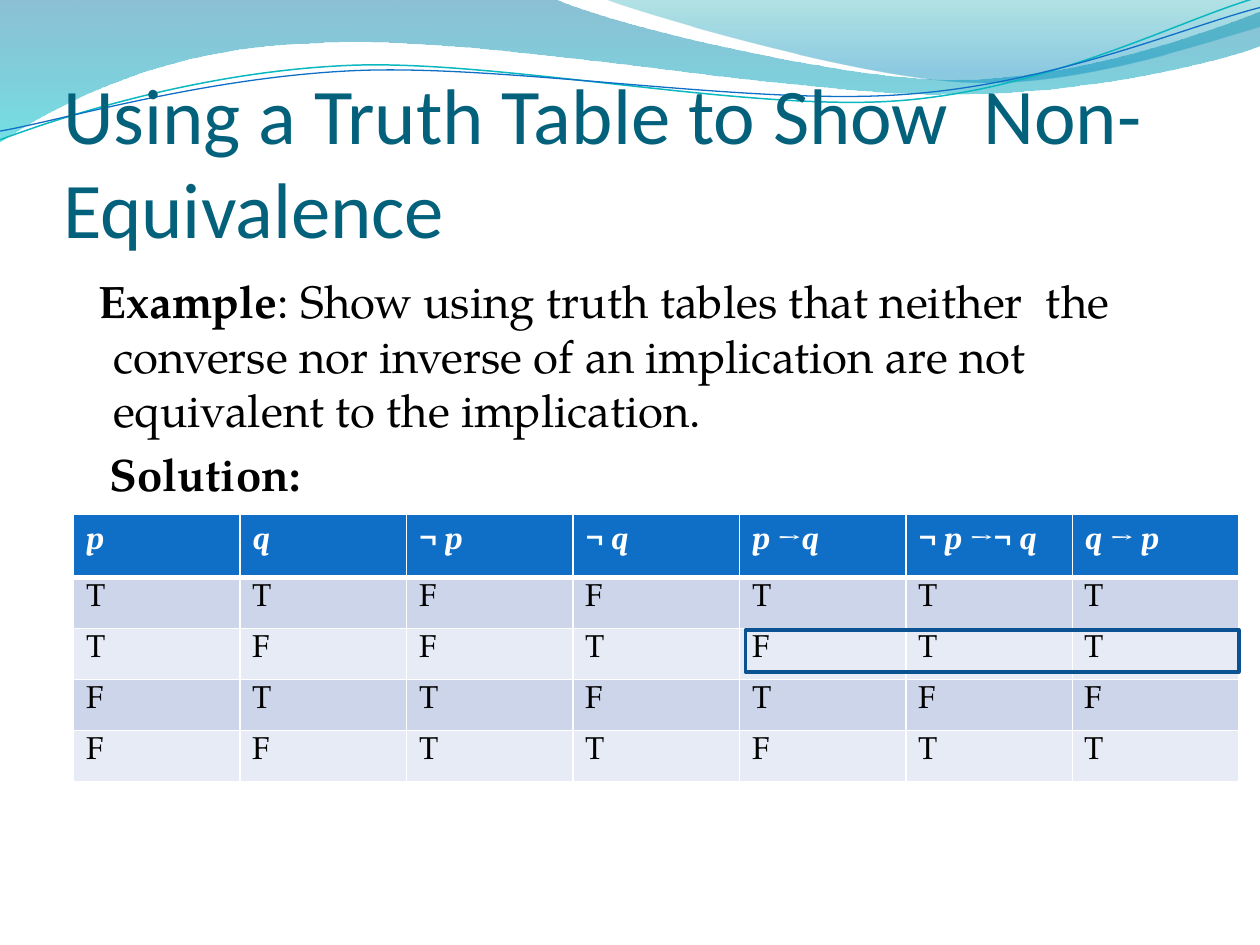
from dataclasses import dataclass
from itertools import groupby
from typing import Optional

from lxml.etree import SubElement
from pptx import Presentation
from pptx.dml.color import RGBColor
from pptx.enum.shapes import MSO_SHAPE
from pptx.enum.text import MSO_ANCHOR, MSO_AUTO_SIZE, PP_ALIGN
from pptx.oxml.ns import qn
from pptx.util import Pt

BLACK = RGBColor(0x00, 0x00, 0x00)
WHITE = RGBColor(0xFF, 0xFF, 0xFF)
TITLE_TEAL = RGBColor(0x04, 0x61, 0x7B)
BLUE = RGBColor(0x0F, 0x6F, 0xC6)
DARK_BLUE = RGBColor(0x0B, 0x52, 0x92)
AQUA = RGBColor(0x0A, 0xB8, 0xBF)
BANDS = (RGBColor(0xCC, 0xD5, 0xEA), RGBColor(0xE7, 0xEB, 0xF5))
BODY_FONT = "TeX Gyre Pagella"


@dataclass
class Stop:
    position: float
    color: RGBColor
    opacity: int  # percent


@dataclass
class Wave:
    """Path in points: 2 numbers are a line end, 6 a cubic Bézier segment."""
    start: tuple
    segments: list
    stops: tuple = ()
    line: Optional[RGBColor] = None
    width: float = 0


WAVES = [
    Wave((0, 0), [
        (316.8, -0.7), (342.7, 12.2, 478.1, 45.4, 545.8, 45.4),
        (614.2, 45.4, 689.8, 18.7, 720, 6.5), (720.7, 25.9),
        (707.8, 31.7, 626.4, 54.7, 537.1, 54),
        (447.8, 54, 275, 20.2, 185, 24.5),
        (92.9, 25.9, 33.1, 59.8, -0.7, 81.4), (0, 0)],
        stops=(Stop(0, RGBColor(0x00, 0x74, 0xA1), 45),
               Stop(1, RGBColor(0x00, 0xC6, 0xCF), 55))),
    Wave((344.9, -0.7), [
        (366.5, 7.9, 491, 44.6, 553.7, 46.8),
        (616.3, 49.7, 691.9, 23, 720, 15.1), (720, 0), (344.9, -0.7)],
        stops=(Stop(0, RGBColor(0x00, 0xA1, 0xA9), 30),
               Stop(0.8, RGBColor(0x00, 0x8B, 0xBF), 45))),
    Wave((0, 79.9), [
        (34.6, 67, 113.8, 41, 199.4, 37.4),
        (284.4, 33.8, 427, 64.1, 513.4, 57.6),
        (599.8, 51.1, 675.4, 10.8, 718.6, -1.4)], line=AQUA, width=0.85),
    Wave((0, 74.9), [
        (33.8, 69.1, 118.1, 43.9, 203.8, 40.3),
        (290.2, 36.7, 429.8, 60.5, 516.2, 54),
        (601.9, 48.2, 677.5, 15.1, 720, 4.3)], line=BLUE, width=0.75),
]

HEADERS = ["p", "q", "¬ p", "¬ q", "p →q", "¬ p →¬ q", "q → p"]
ROWS = ["TTFFTTT", "TFFTFTT", "FTTFTFF", "FFTTFTT"]


def bend_segments(s, wave: Wave) -> None:
    """Merge each run of three vertices of a curve into one cubic segment."""
    vertices = iter(list(s._element.iter(qn("a:lnTo"))))
    for seg in wave.segments:
        first = next(vertices)
        if len(seg) == 6:
            first.tag = qn("a:cubicBezTo")
            for vertex in (next(vertices), next(vertices)):
                first.append(vertex[0])
                vertex.getparent().remove(vertex)


def draw_wave(shapes, wave: Wave) -> None:
    # Path units are hundredths of a point
    x, y = (round(v * 100) for v in wave.start)
    vertices = [(round(seg[i] * 100), round(seg[i + 1] * 100))
                for seg in wave.segments for i in range(0, len(seg), 2)]
    fb = shapes.build_freeform(x, y, scale=Pt(1) / 100)
    fb.add_line_segments(vertices, close=bool(wave.stops))
    s = fb.convert_to_shape()
    bend_segments(s, wave)
    s.shadow.inherit = False
    if wave.stops:
        s.line.fill.background()
        s.fill.gradient()
        s.fill.gradient_angle = 270
        for target, stop in zip(s.fill.gradient_stops, wave.stops):
            target.color.rgb = stop.color
            target.position = stop.position
        for clr, stop in zip(s._element.spPr.iter(qn("a:srgbClr")), wave.stops):
            SubElement(clr, qn("a:alpha")).set("val", str(stop.opacity * 1000))
    else:
        s.fill.background()
        s.line.color.rgb = wave.line
        s.line.width = Pt(wave.width)


def add_run(p, text: str, *, size: float, font: str = BODY_FONT,
            color: RGBColor = BLACK, bold: bool = False, italic: bool = False) -> None:
    r = p.add_run()
    r.text = text
    f = r.font
    f.size, f.name, f.bold, f.italic = Pt(size), font, bold, italic
    f.color.rgb = color


def hang(p, indent: float) -> None:
    pPr = p._p.get_or_add_pPr()
    pPr.set("marL", str(Pt(21.6)))
    pPr.set("indent", str(Pt(indent)))
    p.space_before = Pt(5.2)


def draw_title(s) -> None:
    s.left, s.top, s.width, s.height = Pt(36), Pt(55.4), Pt(648), Pt(90)
    tf = s.text_frame
    tf.auto_size = MSO_AUTO_SIZE.NONE
    tf.word_wrap = True
    tf.vertical_anchor = MSO_ANCHOR.BOTTOM
    tf.margin_left = tf.margin_right = tf.margin_bottom = 0
    p = tf.paragraphs[0]
    p.alignment = PP_ALIGN.LEFT
    add_run(p, "Using a Truth Table to Show  Non-Equivalence",
            size=45, font="Calibri", color=TITLE_TEAL)


def draw_body(shapes) -> None:
    tf = shapes.add_textbox(Pt(36), Pt(152.6), Pt(648), Pt(345.6)).text_frame
    tf.word_wrap = True
    p = tf.paragraphs[0]
    hang(p, -8.2)
    add_run(p, "Example", size=26, bold=True)
    add_run(p, ": Show using truth tables that neither  the converse nor inverse "
               "of an implication are not equivalent to the implication.", size=26)
    p = tf.add_paragraph()
    hang(p, -2)
    add_run(p, "Solution:", size=26, bold=True)


def format_cell(cell, fill: RGBColor, top: float, bottom: float) -> None:
    tcPr = cell._tc.get_or_add_tcPr()
    for side, width in (("L", 1), ("R", 1), ("T", top), ("B", bottom)):
        ln = SubElement(tcPr, qn(f"a:ln{side}"), w=str(Pt(width)))
        SubElement(SubElement(ln, qn("a:solidFill")), qn("a:srgbClr"), val=str(WHITE))
    cell.fill.solid()
    cell.fill.fore_color.rgb = fill


def draw_truth_table(shapes) -> None:
    table = shapes.add_table(len(ROWS) + 1, len(HEADERS), Pt(42), Pt(294),
                             Pt(666), Pt(152.6)).table
    for col in table.columns:
        col.width = Pt(666 / len(HEADERS))
    for i, row in enumerate(table.rows):
        row.height = Pt(29.16 if i else 36)
    for c, header in enumerate(HEADERS):
        cell = table.cell(0, c)
        format_cell(cell, BLUE, top=1, bottom=3)
        # Variables are italic, operators upright
        for italic, chars in groupby(header, key=lambda ch: ch in "pq"):
            add_run(cell.text_frame.paragraphs[0], "".join(chars), size=18,
                    font="Cambria", color=WHITE, bold=True, italic=italic)
    for i, values in enumerate(ROWS):
        for c, value in enumerate(values):
            cell = table.cell(i + 1, c)
            format_cell(cell, BANDS[i % 2], top=1 if i else 3, bottom=1)
            add_run(cell.text_frame.paragraphs[0], value, size=18)


def draw_highlight(shapes) -> None:
    s = shapes.add_shape(MSO_SHAPE.RECTANGLE, Pt(426), Pt(360), Pt(282), Pt(24))
    s.shadow.inherit = False
    s.fill.background()
    s.line.color.rgb = DARK_BLUE
    s.line.width = Pt(2)


def main() -> None:
    prs = Presentation()
    prs.slide_width, prs.slide_height = Pt(720), Pt(540)
    slide = prs.slides.add_slide(prs.slide_layouts[5])
    shapes = slide.shapes

    # Decorative waves, with the title in front of them
    for wave in WAVES:
        draw_wave(shapes, wave)
    title = shapes.title
    shapes._spTree.append(title._element)
    draw_title(title)

    # Content
    draw_body(shapes)
    draw_truth_table(shapes)
    draw_highlight(shapes)
    prs.save("out.pptx")


if __name__ == "__main__":
    main()
